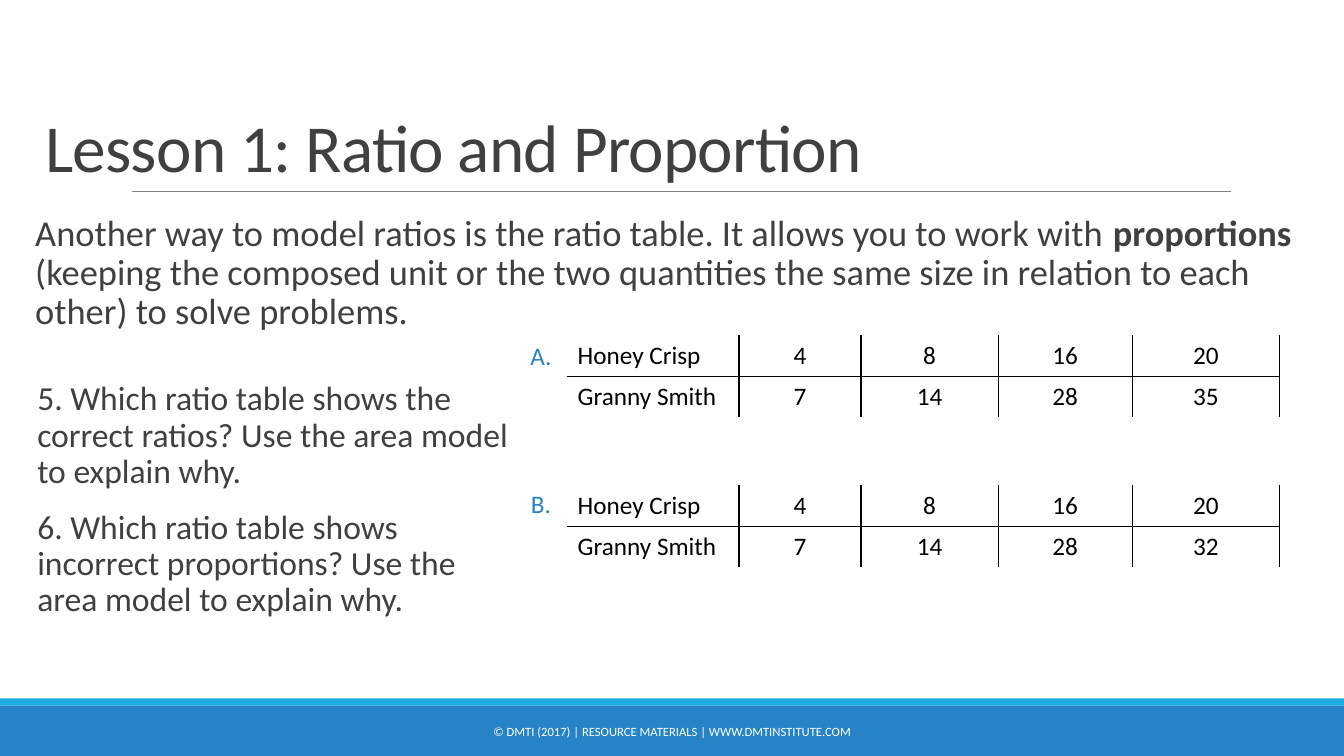
from dataclasses import dataclass

from lxml import etree
from pptx import Presentation
from pptx import util as u
from pptx.dml.color import RGBColor
from pptx.enum import shapes, text
from pptx.oxml import ns


@dataclass(frozen=True)
class Theme:
    font: str = "Calibri"
    ink: str = "404040"
    black: str = "000000"
    white: str = "FFFFFF"
    blue: str = "2683C6"
    cyan: str = "1CADE4"
    gray: str = "808080"
    title: int = 48
    lead: int = 26
    body: int = 24
    cell: int = 18
    foot: int = 9


LEFT = text.PP_ALIGN.LEFT
MID = text.PP_ALIGN.CENTER
TOP = text.MSO_ANCHOR.TOP


class Page:
    def __init__(self, slide, theme):
        self.slide = slide
        self.theme = theme

    def put(self, item, vals):
        for name, val in vals.items():
            setattr(item, name, val)

    def box(self, at):
        return [u.Inches(n) for n in at]

    def bar(self, at, color):
        bar = self.slide.shapes.add_shape(shapes.MSO_SHAPE.RECTANGLE, *self.box(at))
        bar.shadow.inherit = False
        bar.fill.solid()
        bar.fill.fore_color.rgb = RGBColor.from_string(color)
        bar.line.fill.background()

    def rule(self, ends, color, width):
        rule = self.slide.shapes.add_connector(
            shapes.MSO_CONNECTOR.STRAIGHT, *self.box(ends))
        rule.line.color.rgb = RGBColor.from_string(color)
        rule.line.width = u.Pt(width)
        etree.SubElement(rule._element.spPr, ns.qn("a:effectLst"))

    def run(self, para, words, size, color, bold=False, track=0):
        run = para.add_run()
        run.text = words
        self.put(run.font, {"name": self.theme.font, "size": u.Pt(size), "bold": bold})
        run.font.color.rgb = RGBColor.from_string(color)
        if track:
            run.font._element.set("spc", str(track))

    def note(self, at, paras, size, color, align=LEFT, anchor=TOP,
             lead=1, gap=0, after=0, side=0.1, track=0):
        frame = self.slide.shapes.add_textbox(*self.box(at)).text_frame
        self.put(frame, {"word_wrap": True, "vertical_anchor": anchor,
                         "margin_left": u.Inches(side), "margin_right": u.Inches(side)})
        for i, runs in enumerate(paras):
            para = frame.add_paragraph() if i else frame.paragraphs[0]
            self.put(para, {"alignment": align, "line_spacing": lead,
                            "space_before": u.Pt(gap if i else 0),
                            "space_after": u.Pt(after)})
            for words, bold in runs:
                self.run(para, words, size, color, bold, track)

    def edge(self, cell, side):
        line = etree.SubElement(cell._tc.get_or_add_tcPr(), ns.qn("a:ln" + side),
                                w=str(u.Pt(1)))
        fill = etree.SubElement(line, ns.qn("a:solidFill"))
        etree.SubElement(fill, ns.qn("a:srgbClr"), val=self.theme.black)

    def grid(self, at, cols, rows):
        table = self.slide.shapes.add_table(len(rows), len(cols), *self.box(at)).table
        self.put(table, {"first_row": False, "horz_banding": False})
        for col, width in zip(table.columns, cols):
            col.width = u.Inches(width)
        for r, row in enumerate(rows):
            for c, words in enumerate(row):
                cell = table.cell(r, c)
                para = cell.text_frame.paragraphs[0]
                para.alignment = MID if c else LEFT
                self.run(para, words, self.theme.cell, self.theme.black)
                for side, shown in {"L": c > 0, "R": True, "T": r > 0,
                                    "B": r < len(rows) - 1}.items():
                    if shown:
                        self.edge(cell, side)
                cell.fill.background()


def main():
    deck = Presentation()
    deck.slide_width, deck.slide_height = u.Inches(13.33), u.Inches(7.5)
    theme = Theme()
    page = Page(deck.slides.add_slide(deck.slide_layouts[6]), theme)

    page.bar((0, 7, 13.33, 0.5), theme.blue)
    page.bar((0, 6.93, 13.33, 0.07), theme.cyan)
    page.rule((1.31, 1.9, 12.21, 1.9), theme.gray, 0.5)
    page.note((0.35, 0.31, 11.85, 1.59), [[("Lesson 1: Ratio and Proportion", False)]],
              theme.title, theme.ink, anchor=text.MSO_ANCHOR.BOTTOM, lead=0.85, track=-50)
    page.note((4.03, 7.06, 5.27, 0.4),
              [[("© DMTI (2017) | RESOURCE MATERIALS | WWW.DMTINSTITUTE.COM", False)]],
              theme.foot, theme.white, MID, text.MSO_ANCHOR.MIDDLE)

    flow = {"lead": 0.9, "gap": 12, "after": 2, "side": 0}
    page.note((0.35, 2.08, 12.53, 1.47), [[
        ("Another way to model ratios is the ratio table. It allows you to work with ", False),
        ("proportions", True),
        (" (keeping the composed unit or the two quantities the same size in relation "
         "to each other) to solve problems.", False),
    ]], theme.lead, theme.ink, **flow)
    page.note((0.37, 3.74, 4.74, 2.77), [
        [("5. Which ratio table shows the correct ratios? "
          "Use the area model to explain why.", False)],
        [("6. Which ratio table shows incorrect proportions? "
          "Use the area model to explain why.", False)],
    ], theme.body, theme.ink, **flow)

    cols = (1.7, 1.21, 1.36, 1.33, 1.46)
    for mark, top, high, last in (("A.", 3.33, 3.33, "35"), ("B.", 4.82, 4.8, "32")):
        page.grid((5.63, top, sum(cols), 0.81), cols, (
            ("Honey Crisp", "4", "8", "16", "20"),
            ("Granny Smith", "7", "14", "28", last),
        ))
        page.note((4.94, high, 0.85, 0.4), [[(mark, False)]], theme.cell, theme.blue, MID)

    deck.save("out.pptx")


if __name__ == "__main__":
    main()
